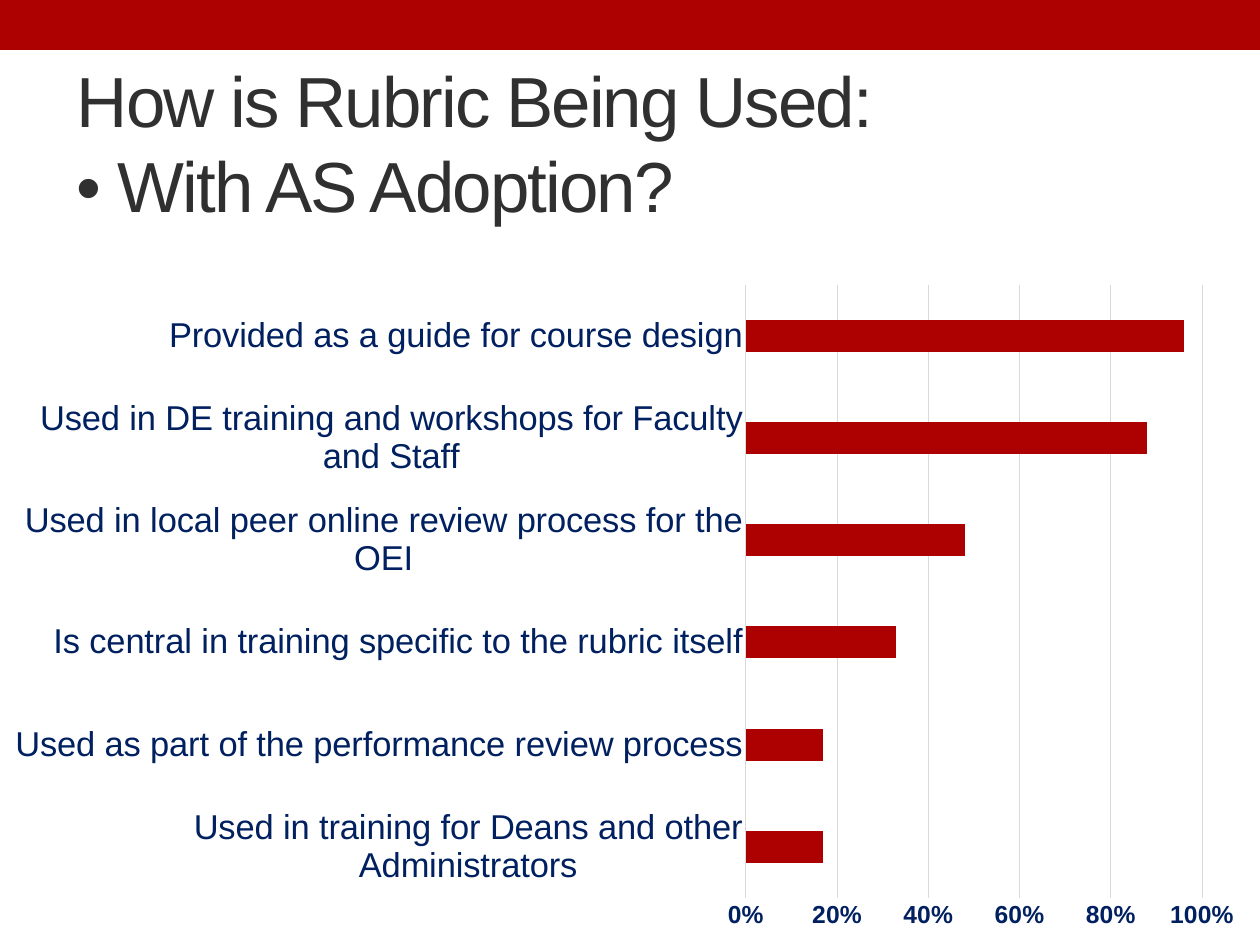
"""Build the slide on how the rubric is used with AS adoption."""
from typing import NamedTuple

from lxml import etree
from pptx import Presentation
from pptx.chart.data import CategoryChartData
from pptx.dml.color import RGBColor
from pptx.enum.chart import XL_CHART_TYPE, XL_TICK_MARK
from pptx.enum.shapes import MSO_SHAPE
from pptx.enum.text import MSO_ANCHOR, MSO_AUTO_SIZE, PP_ALIGN
from pptx.oxml.ns import qn
from pptx.util import Pt

BAR_CLUSTERED = XL_CHART_TYPE.BAR_CLUSTERED
TICK_NONE = XL_TICK_MARK.NONE
RECTANGLE = MSO_SHAPE.RECTANGLE
MIDDLE = MSO_ANCHOR.MIDDLE
NO_AUTOFIT = MSO_AUTO_SIZE.NONE
LEFT = PP_ALIGN.LEFT

EMU_PER_PX = 10320
FONT = "Arial"
RED, NAVY, INK, GRAY = "AD0101", "002060", "303030", "D9D9D9"


class Box(NamedTuple):
    left: int
    top: int
    width: int
    height: int


class Usage(NamedTuple):
    label: str
    share: float


SLIDE = Box(0, 0, 1260, 945)
BAND = Box(0, 0, 1260, 50)
TITLE = Box(63, 74, 1134, 136)
CHART = Box(0, 272, 1260, 673)
PLOT = Box(746, 13, 456, 613)

TITLE_LINES = ("How is Rubric Being Used:", "• With AS Adoption?")
USAGES = (
    Usage("Used in training for Deans and other Administrators", 0.17),
    Usage("Used as part of the performance review process", 0.17),
    Usage("Is central in training specific to the rubric itself", 0.33),
    Usage("Used in local peer online review process for the OEI", 0.48),
    Usage("Used in DE training and workshops for Faculty and Staff", 0.88),
    Usage("Provided as a guide for course design", 0.96),
)


def px(length: int) -> int:
    return length * EMU_PER_PX


def emu(box: Box) -> list[int]:
    return [px(length) for length in box]


def color(value: str) -> RGBColor:
    return RGBColor.from_string(value)


def style_font(font, size: float, value: str, bold: bool = False) -> None:
    font.name = FONT
    font.size = Pt(size)
    font.bold = bold
    font.color.rgb = color(value)


def style_line(line, value: str) -> None:
    line.color.rgb = color(value)
    line.width = Pt(0.75)


def add_band(slide) -> None:
    band = slide.shapes.add_shape(RECTANGLE, *emu(BAND))
    band.shadow.inherit = False
    band.fill.solid()
    band.fill.fore_color.rgb = color(RED)
    band.line.fill.background()


def fill_title(slide) -> None:
    title = slide.shapes.title
    title.left, title.top, title.width, title.height = emu(TITLE)
    frame = title.text_frame
    frame.auto_size = NO_AUTOFIT
    frame.word_wrap = True
    frame.vertical_anchor = MIDDLE
    frame.margin_left = frame.margin_right = px(14)
    frame.margin_top = frame.margin_bottom = px(7)
    paragraph = frame.paragraphs[0]
    paragraph.alignment = LEFT
    for index, line in enumerate(TITLE_LINES):
        if index:
            paragraph.add_line_break()
        run = paragraph.add_run()
        run.text = line
        style_font(run.font, 57.6, INK)
    for properties in paragraph._p.iter(qn("a:rPr")):
        properties.set("spc", "-160")


def place_plot(chart) -> None:
    plot_area = chart._chartSpace.chart.plotArea
    for old_layout in plot_area.findall(qn("c:layout")):
        plot_area.remove(old_layout)
    layout = etree.Element(qn("c:layout"))
    plot_area.insert(0, layout)
    manual = etree.SubElement(layout, qn("c:manualLayout"))
    settings = {
        "layoutTarget": "inner",
        "xMode": "edge",
        "yMode": "edge",
        "x": round(PLOT.left / CHART.width, 3),
        "y": round(PLOT.top / CHART.height, 3),
        "w": round(PLOT.width / CHART.width, 3),
        "h": round(PLOT.height / CHART.height, 3),
    }
    for name, value in settings.items():
        etree.SubElement(manual, qn(f"c:{name}")).set("val", str(value))


def style_axes(chart) -> None:
    categories, values = chart.category_axis, chart.value_axis
    for axis in (categories, values):
        axis.major_tick_mark = axis.minor_tick_mark = TICK_NONE
    style_font(categories.tick_labels.font, 28, NAVY)
    style_line(categories.format.line, GRAY)
    style_font(values.tick_labels.font, 20, NAVY, bold=True)
    values.format.line.fill.background()
    values.minimum_scale, values.maximum_scale, values.major_unit = 0, 1, 0.2
    values.has_major_gridlines = True
    style_line(values.major_gridlines.format.line, GRAY)
    values.tick_labels.number_format = "0%"
    values.tick_labels.number_format_is_linked = False


def add_usage_chart(slide) -> None:
    data = CategoryChartData(number_format="0%")
    data.categories = [usage.label for usage in USAGES]
    data.add_series("Series 1", [usage.share for usage in USAGES])
    chart = slide.shapes.add_chart(BAR_CLUSTERED, *emu(CHART), data).chart
    chart.has_legend = False
    chart.has_title = False
    style_font(chart.font, 10, "000000")
    plot = chart.plots[0]
    plot.gap_width = 219
    plot.vary_by_categories = False
    bars = plot.series[0].format
    bars.fill.solid()
    bars.fill.fore_color.rgb = color(RED)
    style_axes(chart)
    place_plot(chart)


def main() -> None:
    presentation = Presentation()
    presentation.slide_width = px(SLIDE.width)
    presentation.slide_height = px(SLIDE.height)
    slide = presentation.slides.add_slide(presentation.slide_layouts[5])
    add_band(slide)
    fill_title(slide)
    add_usage_chart(slide)
    presentation.save("out.pptx")


if __name__ == "__main__":
    main()
